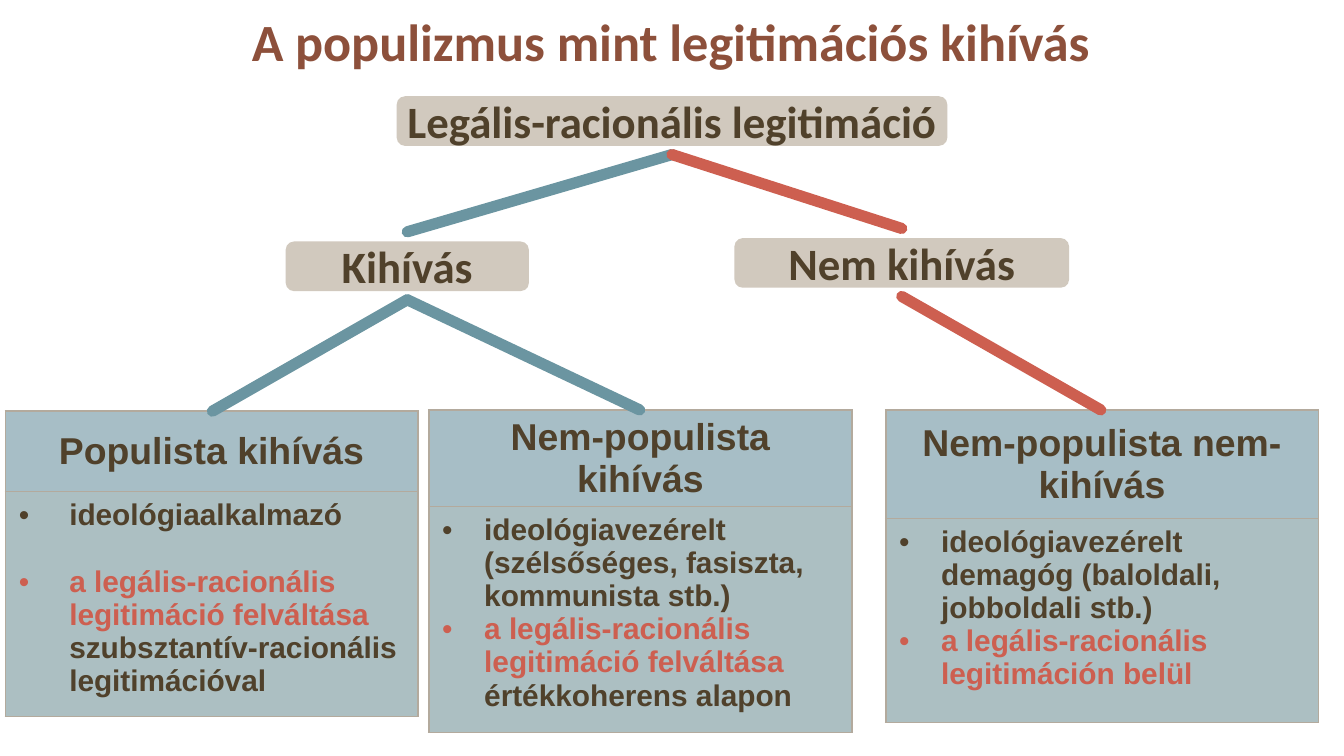
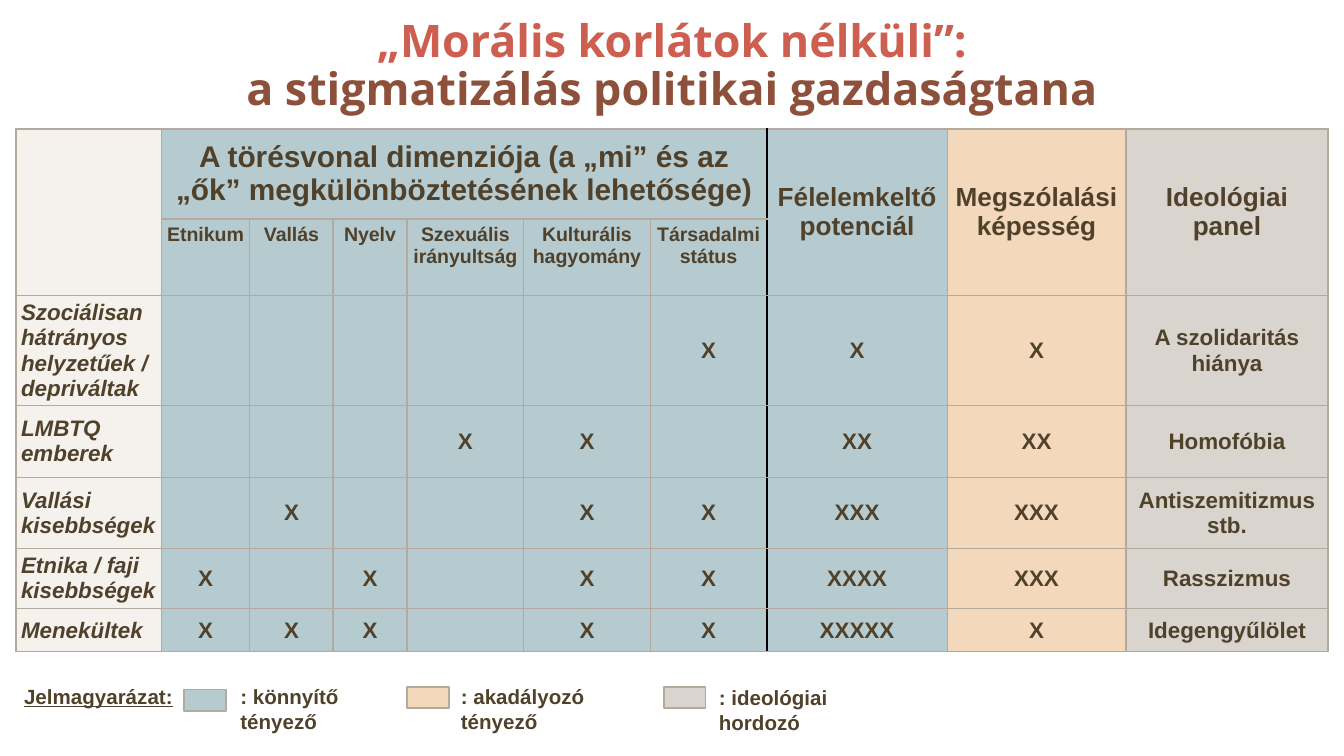
from dataclasses import dataclass

import pptx
import pptx.chart.data
import pptx.dml.color
import pptx.enum.shapes
import pptx.enum.text
import pptx.oxml
import pptx.oxml.ns
import pptx.util
from lxml import etree

Pt = pptx.util.Pt
qn = pptx.oxml.ns.qn
Anchor = pptx.enum.text.MSO_ANCHOR
Align = pptx.enum.text.PP_ALIGN
Shape = pptx.enum.shapes.MSO_SHAPE


@dataclass(frozen=True)
class Theme:
    """Colours, fonts and type sizes shared by the slides."""
    brown: str = "8D503B"
    ink: str = "50412B"
    red: str = "CD5F50"
    teal: str = "6B95A1"
    deep_teal: str = "4D7C8B"
    pale_teal: str = "ACBFC2"
    orange: str = "E9B178"
    taupe: str = "B3AA9D"
    pill: str = "D1C9BE"
    cream: str = "EFEAE4"
    black: str = "000000"
    body_font: str = "Arial"
    label_font: str = "Calibri"
    display_font: str = "Open Sans"
    title_size: float = 28
    label_size: float = 24
    card_head_size: float = 20
    card_body_size: float = 16
    column_size: float = 14
    cell_size: float = 12
    key_size: float = 11
    subhead_size: float = 10.5
    tint: int = 49
    cream_tint: int = 60


THEME = Theme()

CARDS = [
    ((229.7, 219.6, 226.8), (45.4, 121), 22.5, 0, "Nem-populista kihívás",
     [[("ideológiavezérelt (szélsőséges, fasiszta, kommunista stb.)", THEME.ink)],
      [("a legális-racionális legitimáció felváltása", THEME.red),
       (" értékkoherens alapon", THEME.ink)]]),
    ((2.9, 220.3, 221), (43.2, 120.2), 27, 18, "Populista kihívás",
     [[("ideológiaalkalmazó", THEME.ink)],
      [("a legális-racionális legitimáció felváltása ", THEME.red),
       ("szubsztantív-racionális legitimációval", THEME.ink)]]),
    ((474.5, 219.6, 231.8), (58.3, 109.4), 22.5, 0, "Nem-populista nem-kihívás",
     [[("ideológiavezérelt demagóg (baloldali, jobboldali stb.)", THEME.ink)],
      [("a legális-racionális legitimáción belül", THEME.red)]]),
]

COLUMN_WIDTHS = [77.8, 47.5, 44.6, 39.6, 62.6, 67.7, 62.6, 96.5, 95.8, 108.3]
ROW_HEIGHTS = [48.2, 41, 33.8, 38.2, 38.2, 23, 23]
DIMENSIONS = ["Etnikum", "Vallás", "Nyelv", "Szexuális irányultság",
              "Kulturális hagyomány", "Társadalmi státus"]
GROUPS = [
    ("Szociálisan hátrányos helyzetűek / depriváltak", "-----X", 1, 1, "A szolidaritás hiánya"),
    ("LMBTQ emberek", "---XX-", 2, 2, "Homofóbia"),
    ("Vallási kisebbségek", "-X--XX", 3, 3, "Antiszemitizmus stb."),
    ("Etnika / faji kisebbségek", "X-X-XX", 4, 3, "Rasszizmus"),
    ("Menekültek", "XXX-XX", 5, 1, "Idegengyűlölet"),
]
COLUMN_COLORS = [THEME.cream] + [THEME.teal] * 7 + [THEME.orange, THEME.taupe]
FEAR_COLUMN = 7

KEYS = [
    (98.6, 369.4, 121.7, 362.9, 108, ": könnyítő tényező", THEME.teal),
    (218.2, 367.9, 239.8, 362.9, 120.2, ": akadályozó tényező", THEME.orange),
    (355.7, 367.9, 378, 363.6, 106.6, ": ideológiai hordozó", THEME.taupe),
]


def rgb(color):
    """Turn a hex string into a colour."""
    return pptx.dml.color.RGBColor.from_string(color)


def paint(fill, properties, color, opacity=100):
    """Fill solidly, optionally see-through."""
    fill.solid()
    fill.fore_color.rgb = rgb(color)
    if opacity < 100:
        swatch = properties.find(qn("a:solidFill") + "/" + qn("a:srgbClr"))
        etree.SubElement(swatch, qn("a:alpha"), val=str(opacity * 1000))


def style_runs(paragraph, size, color=THEME.ink, font=THEME.body_font, italic=False):
    """Format every run of a paragraph in bold."""
    for run in paragraph.runs:
        run.font.size, run.font.name = Pt(size), font
        run.font.bold, run.font.italic = True, italic
        run.font.color.rgb = rgb(color)


def add_slide(deck, box, lines, font, size):
    """Add a title-only slide; each title line is a (text, colour) pair."""
    slide = deck.slides.add_slide(deck.slide_layouts[5])
    title = slide.shapes.title
    title.left, title.top, title.width, title.height = map(Pt, box)
    frame = title.text_frame
    frame.auto_size = pptx.enum.text.MSO_AUTO_SIZE.NONE
    frame.vertical_anchor = Anchor.MIDDLE
    frame.text = "\n".join(text for text, _ in lines)
    for paragraph, (_, color) in zip(frame.paragraphs, lines):
        paragraph.alignment = Align.CENTER
        paragraph.line_spacing = 0.9
        style_runs(paragraph, size, color, font)
    return slide


def add_text(slide, box, text, size, font=THEME.body_font, align=Align.LEFT, anchor=Anchor.TOP):
    """Add a wrapping text box."""
    label = slide.shapes.add_textbox(*map(Pt, box))
    frame = label.text_frame
    frame.word_wrap = True
    frame.auto_size = pptx.enum.text.MSO_AUTO_SIZE.SHAPE_TO_FIT_TEXT
    frame.vertical_anchor = anchor
    frame.text = text
    frame.paragraphs[0].alignment = align
    style_runs(frame.paragraphs[0], size, font=font)
    return label


def add_block(slide, kind, box, color, opacity=100, outline=None):
    """Add a flat filled shape."""
    block = slide.shapes.add_shape(kind, *map(Pt, box))
    block.shadow.inherit = False
    paint(block.fill, block._element.spPr, color, opacity)
    if outline:
        block.line.color.rgb = rgb(outline)
        block.line.width = Pt(1)
    else:
        block.line.fill.background()


def add_node(slide, center, top, width, pill_width, text):
    """Add a tree label over its rounded plate and return the label."""
    add_block(slide, Shape.ROUNDED_RECTANGLE,
              (center - pill_width / 2, top + 5.2, pill_width, 26.6), THEME.pill)
    return add_text(slide, (center - width / 2, top, width, 36.4), text, THEME.label_size,
                    THEME.label_font, Align.CENTER, Anchor.MIDDLE)


def add_branch(slide, parent, color, child=None, point=(0, 0)):
    """Join a child label or a point to the bottom of a parent label."""
    x, y = map(Pt, point)
    branch = slide.shapes.add_connector(pptx.enum.shapes.MSO_CONNECTOR.STRAIGHT, x, y, x, y)
    if child is not None:
        branch.begin_connect(child, 0)
    branch.end_connect(parent, 2)
    branch.line.color.rgb = rgb(color)
    branch.line.width = Pt(6)
    properties = branch._element.spPr
    properties.find(qn("a:ln")).set("cap", "rnd")
    etree.SubElement(properties, qn("a:effectLst"))


def set_borders(cell, **edges):
    """Draw cell borders from L, R, T, B = (colour, width)."""
    properties = cell._tc.get_or_add_tcPr()
    for side in "LRTB":
        color, width = edges[side]
        line = etree.SubElement(properties, qn("a:ln" + side), w=str(Pt(width)))
        etree.SubElement(etree.SubElement(line, qn("a:solidFill")), qn("a:srgbClr"), val=color)


def add_grid(slide, left, top, widths, heights):
    """Add an unbanded table with the given tracks."""
    frame = slide.shapes.add_table(len(heights), len(widths), Pt(left), Pt(top),
                                   Pt(sum(widths)), Pt(sum(heights)))
    grid = frame.table
    grid.first_row = grid.horz_banding = False
    for column, width in zip(grid.columns, widths):
        column.width = Pt(width)
    for row, height in zip(grid.rows, heights):
        row.height = Pt(height)
    return grid


def add_bullet(paragraph, indent, color):
    """Give a paragraph a hanging coloured bullet."""
    properties = paragraph._p.get_or_add_pPr()
    properties.set("marL", str(Pt(indent)))
    properties.set("indent", str(-Pt(indent)))
    etree.SubElement(etree.SubElement(properties, qn("a:buClr")), qn("a:srgbClr"), val=color)
    etree.SubElement(properties, qn("a:buFont"), typeface=THEME.body_font)
    etree.SubElement(properties, qn("a:buChar"), char="•")


def add_card(slide, place, heights, indent, gap, heading, points):
    """Add a two-row table with a heading over bulleted points."""
    left, top, width = place
    card = add_grid(slide, left, top, [width], heights)
    head, body = card.cell(0, 0), card.cell(1, 0)
    side, thin = (THEME.taupe, 1), (THEME.taupe, 0.75)
    set_borders(head, L=side, R=side, T=side, B=thin)
    set_borders(body, L=side, R=side, T=thin, B=thin)
    paint(head.fill, head._tc.tcPr, THEME.deep_teal, THEME.tint)
    paint(body.fill, body._tc.tcPr, THEME.pale_teal)
    head.vertical_anchor = Anchor.MIDDLE
    head.text_frame.text = heading
    head.text_frame.paragraphs[0].alignment = Align.CENTER
    style_runs(head.text_frame.paragraphs[0], THEME.card_head_size)
    for number, parts in enumerate(points):
        frame = body.text_frame
        paragraph = frame.add_paragraph() if number else frame.paragraphs[0]
        add_bullet(paragraph, indent, parts[0][1])
        if number and gap:
            paragraph.space_before = Pt(gap)
        for text, _ in parts:
            paragraph.add_run().text = text
        style_runs(paragraph, THEME.card_body_size)
        for run, (_, color) in zip(paragraph.runs, parts):
            run.font.color.rgb = rgb(color)


def fill_cell(grid, row, column, text, size):
    """Write and style one cell of the stigma table by its position."""
    cell = grid.cell(row, column)
    last = column + (cell.span_width if cell.is_merge_origin else 1) - 1
    thin, thick, divider = (THEME.taupe, 0.75), (THEME.taupe, 1), (THEME.black, 1)
    set_borders(cell,
                L=divider if column == FEAR_COLUMN else thin if column else thick,
                R=divider if last == FEAR_COLUMN - 1
                else thick if last == len(COLUMN_WIDTHS) - 1 else thin,
                T=thin if row else thick, B=thin)
    paint(cell.fill, cell._tc.tcPr, COLUMN_COLORS[column],
          THEME.tint if column else THEME.cream_tint)
    cell.margin_left = cell.margin_right = cell.margin_top = cell.margin_bottom = Pt(2.7)
    cell.vertical_anchor = Anchor.TOP if row == 1 else Anchor.MIDDLE
    paragraph = cell.text_frame.paragraphs[0]
    paragraph.alignment = Align.CENTER if column else Align.LEFT
    if text:
        paragraph.text = text
        style_runs(paragraph, size, italic=column == 0)
    else:
        etree.SubElement(paragraph._p, qn("a:endParaRPr"), sz=str(size * 100))


def add_stigma_table(slide):
    """Add the table of groups against cleavage dimensions."""
    grid = add_grid(slide, 8.6, 69.1, COLUMN_WIDTHS, ROW_HEIGHTS)
    grid.cell(0, 1).merge(grid.cell(0, 6))
    for column in (0, 7, 8, 9):
        grid.cell(0, column).merge(grid.cell(1, column))
    fill_cell(grid, 0, 0, "", THEME.cell_size)
    fill_cell(grid, 0, 1, "A törésvonal dimenziója (a „mi” és az „ők” "
              "megkülönböztetésének lehetősége)", THEME.card_body_size)
    headings = ["Félelemkeltő potenciál", "Megszólalási képesség", "Ideológiai panel"]
    for column, heading in enumerate(headings, FEAR_COLUMN):
        fill_cell(grid, 0, column, heading, THEME.column_size)
    for column, dimension in enumerate(DIMENSIONS, 1):
        fill_cell(grid, 1, column, dimension, THEME.subhead_size)
    for row, (group, marks, fear, voice, panel) in enumerate(GROUPS, 2):
        texts = [group, *(mark.strip("-") for mark in marks), "X" * fear, "X" * voice, panel]
        for column, text in enumerate(texts):
            fill_cell(grid, row, column, text, THEME.cell_size)


def build_challenge_slide(deck):
    """Build the tree of legitimation challenges."""
    slide = add_slide(deck, (7.9, 7.9, 702.7, 31.7),
                      [("A populizmus mint legitimációs kihívás", THEME.brown)],
                      THEME.label_font, THEME.title_size)
    for card in CARDS:
        add_card(slide, *card)
    root = add_node(slide, 360, 46.4, 339, 295, "Legális-racionális legitimáció")
    accepted = add_node(slide, 483.1, 122.4, 191.5, 179.3, "Nem kihívás")
    challenge = add_node(slide, 218.2, 124.2, 141.8, 130.3, "Kihívás")
    add_branch(slide, root, THEME.teal, child=challenge)
    add_branch(slide, root, THEME.red, child=accepted)
    add_branch(slide, challenge, THEME.teal, point=(113.8, 220.3))
    add_branch(slide, accepted, THEME.red, point=(589.7, 219.6))
    add_branch(slide, challenge, THEME.teal, point=(342.7, 219.6))


def build_stigma_slide(deck):
    """Build the table slide with its colour key."""
    slide = add_slide(deck, (8.6, 0, 702.7, 72),
                      [("„Morális korlátok nélküli”:", THEME.red),
                       ("a stigmatizálás politikai gazdaságtana", THEME.brown)],
                      THEME.display_font, THEME.label_size)
    add_stigma_table(slide)
    key_title = add_text(slide, (5.8, 362.9, 97.9, 20.9), "Jelmagyarázat:", THEME.key_size)
    key_title.text_frame.paragraphs[0].runs[0].font.underline = True
    for left, top, text_left, text_top, width, text, color in KEYS:
        add_block(slide, Shape.RECTANGLE, (left, top, 22.3, 11.5), color, THEME.tint, THEME.taupe)
        add_text(slide, (text_left, text_top, width, 20.9), text, THEME.key_size)


def main():
    """Build and save the deck."""
    deck = pptx.Presentation()
    deck.slide_width, deck.slide_height = Pt(720), Pt(405)
    build_challenge_slide(deck)
    build_stigma_slide(deck)
    deck.save("out.pptx")


if __name__ == "__main__":
    main()
